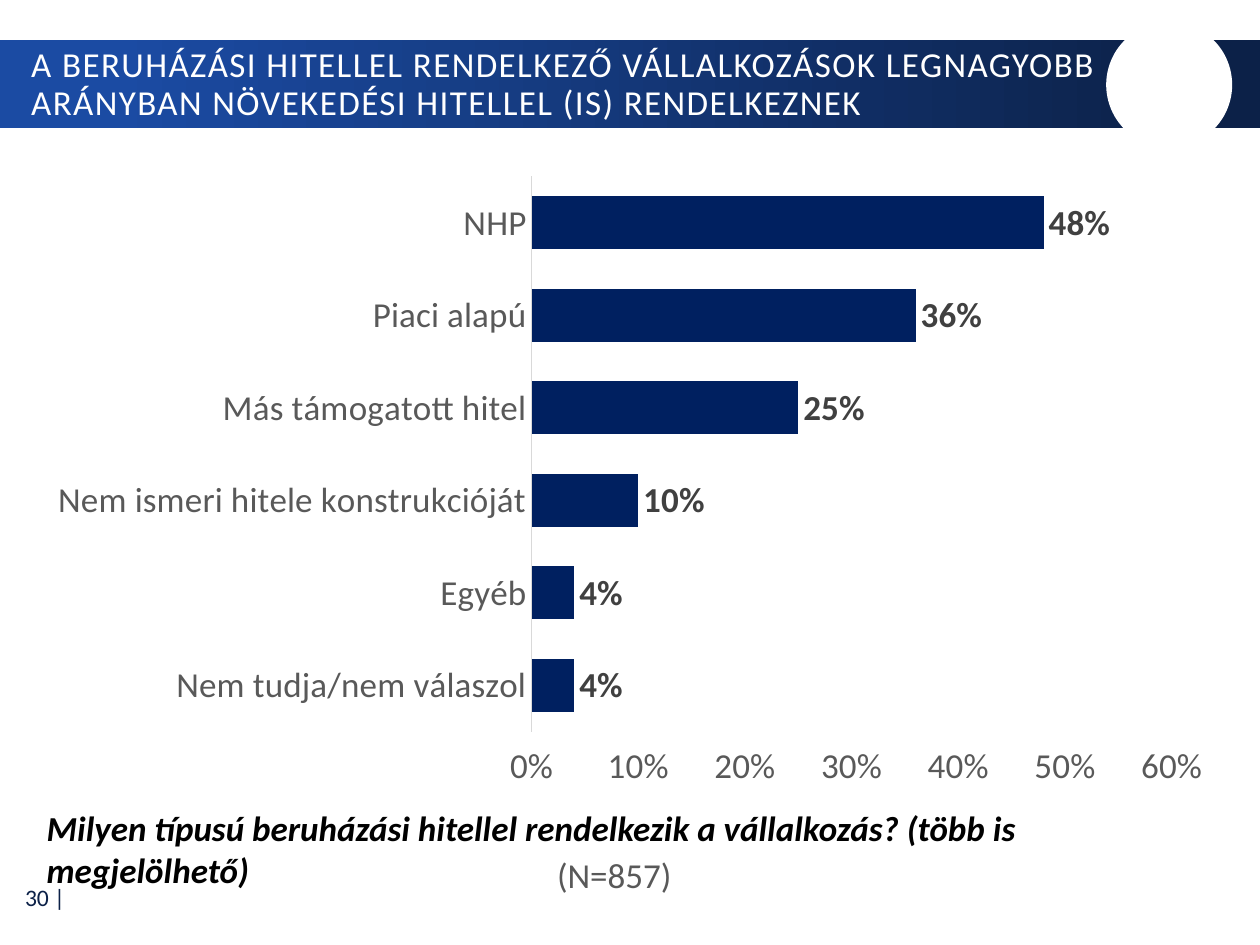
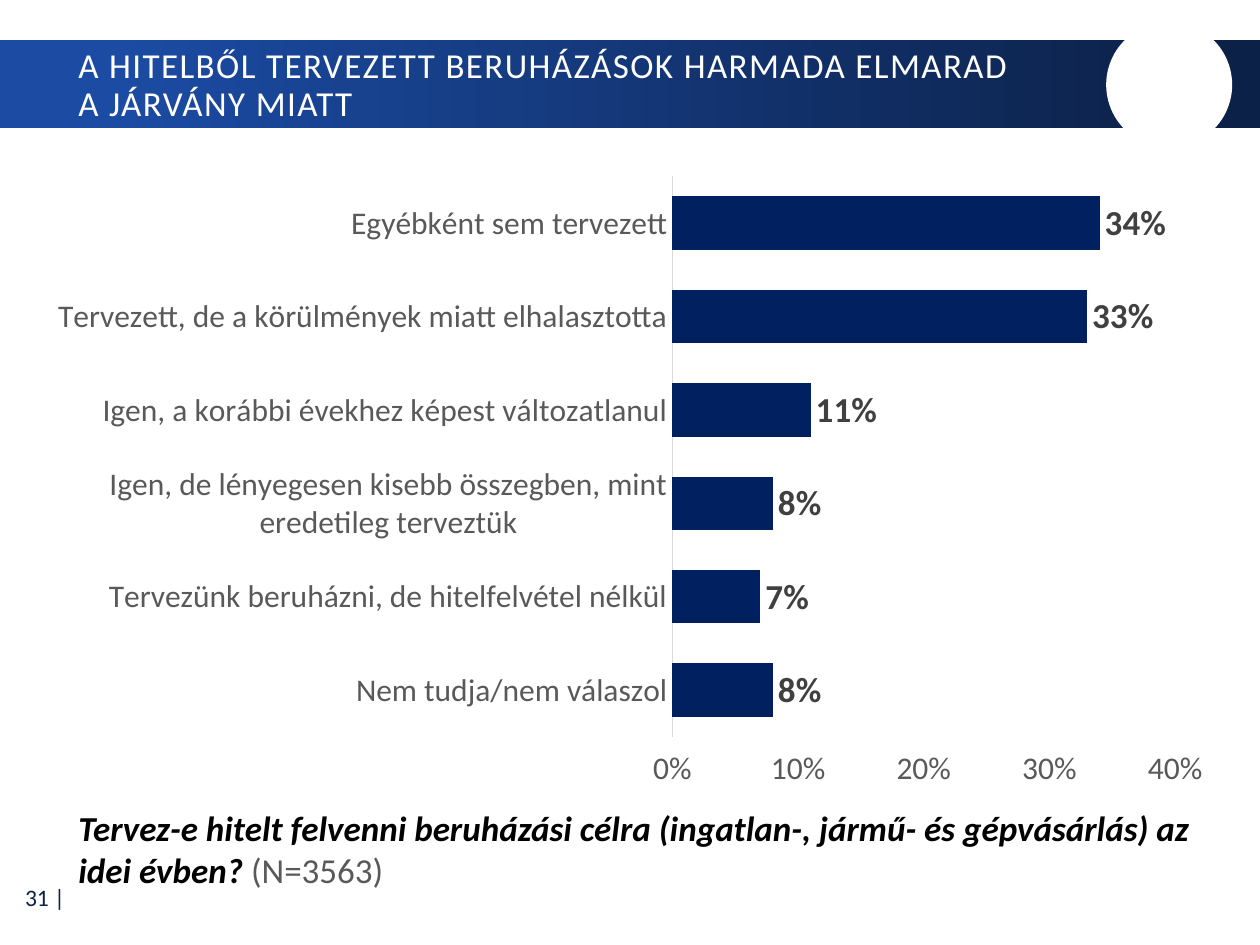
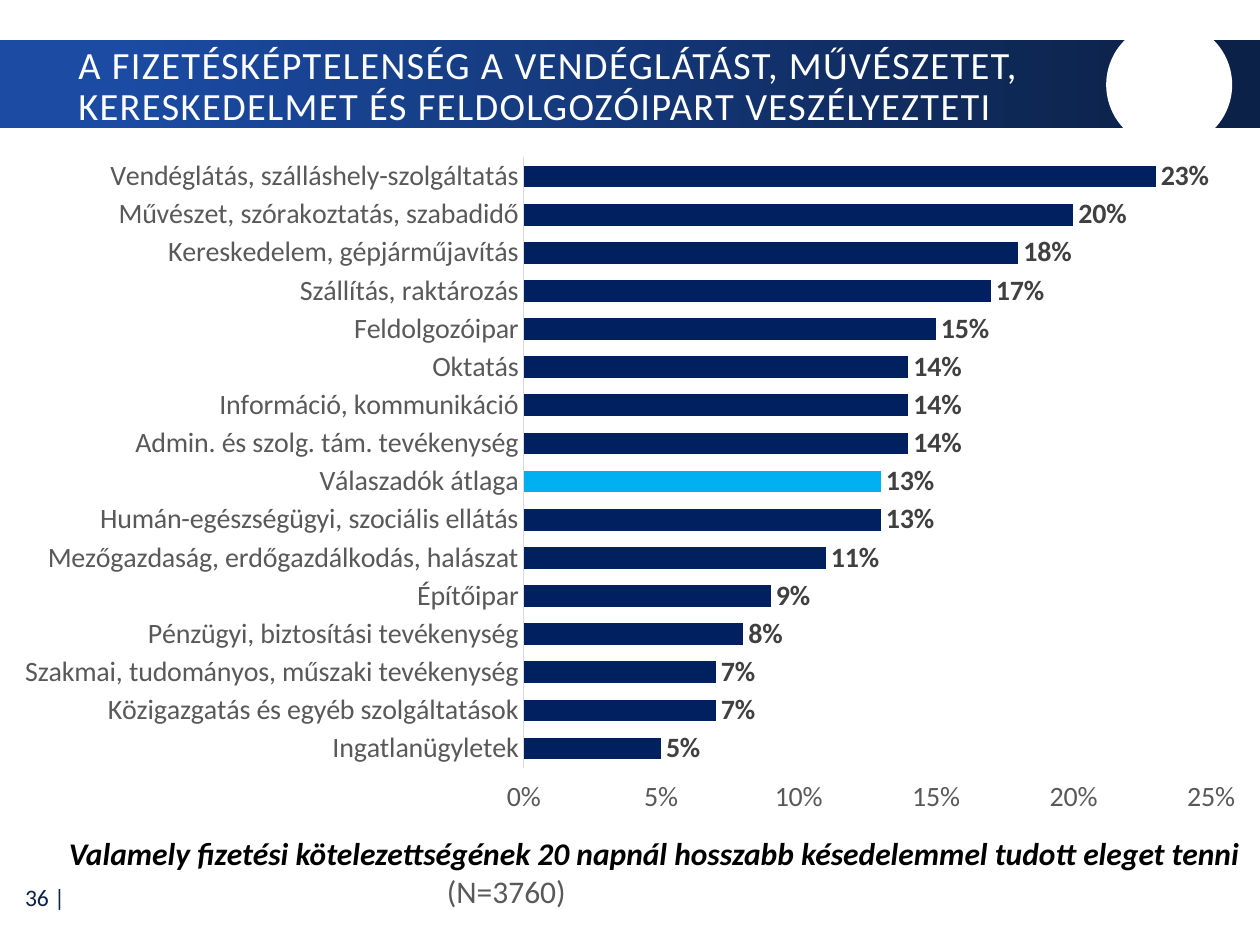
"""Builds three survey slides on corporate loans and late payments."""
from pptx import Presentation
from pptx import util as u
from pptx.chart import data as chart_data
from pptx.dml.color import RGBColor
from pptx.enum import chart as charts, shapes, text

FONT = "Calibri"
COLORS = {
    "band_start": "1B4BA3",
    "band_end": "0C2148",
    "white": "FFFFFF",
    "black": "000000",
    "bar": "002060",
    "highlight": "00B0F0",
    "axis_text": "595959",
    "axis_line": "D9D9D9",
    "value_text": "404040",
}
CHART_BOX = (0.69, 3.3, 24.03, 12.83)

LOAN_TYPES = {
    "NHP": 0.48,
    "Piaci alapú": 0.36,
    "Más támogatott hitel": 0.25,
    "Nem ismeri hitele konstrukcióját": 0.1,
    "Egyéb": 0.04,
    "Nem tudja/nem válaszol": 0.04,
}
LOAN_PLANS = {
    "Egyébként sem tervezett": 0.34,
    "Tervezett, de a körülmények miatt elhalasztotta": 0.33,
    "Igen, a korábbi évekhez képest változatlanul": 0.11,
    "Igen, de lényegesen kisebb összegben, mint eredetileg terveztük": 0.08,
    "Tervezünk beruházni, de hitelfelvétel nélkül": 0.07,
    "Nem tudja/nem válaszol": 0.08,
}
LATE_PAYERS = {
    "Vendéglátás, szálláshely-szolgáltatás": 0.23,
    "Művészet, szórakoztatás, szabadidő": 0.2,
    "Kereskedelem, gépjárműjavítás": 0.18,
    "Szállítás, raktározás": 0.17,
    "Feldolgozóipar": 0.15,
    "Oktatás": 0.14,
    "Információ, kommunikáció": 0.14,
    "Admin. és szolg. tám. tevékenység": 0.14,
    "Válaszadók átlaga": 0.13,
    "Humán-egészségügyi, szociális ellátás": 0.13,
    "Mezőgazdaság, erdőgazdálkodás, halászat": 0.11,
    "Építőipar": 0.09,
    "Pénzügyi, biztosítási tevékenység": 0.08,
    "Szakmai, tudományos, műszaki tevékenység": 0.07,
    "Közigazgatás és egyéb szolgáltatások": 0.07,
    "Ingatlanügyletek": 0.05,
}


def color(name):
    """Return a palette colour."""
    return RGBColor.from_string(COLORS[name])


def place(box):
    """Turn left, top, width and height in centimetres into lengths."""
    return [u.Cm(length) for length in box]


def style_font(font, size, shade, bold=False, italic=False):
    """Apply the shared typeface with a size, colour and emphasis."""
    font.name, font.size = FONT, u.Pt(size)
    font.bold, font.italic = bold, italic
    font.color.rgb = color(shade)


def add_frame(slide, box, anchor=text.MSO_ANCHOR.TOP):
    """Add a wrapping text box and return its text frame."""
    frame = slide.shapes.add_textbox(*place(box)).text_frame
    frame.word_wrap = True
    frame.vertical_anchor = anchor
    return frame


def add_run(paragraph, words, size, shade, **emphasis):
    """Append a styled run to a paragraph."""
    run = paragraph.add_run()
    run.text = words
    style_font(run.font, size, shade, **emphasis)
    return run


def add_plain_shape(slide, kind, box):
    """Add a preset shape without shadow or outline."""
    shape = slide.shapes.add_shape(kind, *place(box))
    shape.shadow.inherit = False
    shape.line.fill.background()
    return shape


def add_base(prs, number):
    """Add a slide with its page number, title band and round badge."""
    slide = prs.slides.add_slide(prs.slide_layouts[6])
    page = add_frame(slide, (0.04, 17.61, 1.52, 0.94), text.MSO_ANCHOR.MIDDLE).paragraphs[0]
    page.alignment = text.PP_ALIGN.RIGHT
    add_run(page, f"{number} |", 13.5, "band_end")

    band = add_plain_shape(slide, shapes.MSO_SHAPE.RECTANGLE, (0, 0.81, 25.4, 1.78))
    band.fill.gradient()
    band.fill.gradient_angle = 0
    ends = ((0.09, "band_start"), (0.95, "band_end"))
    for stop, (position, shade) in zip(band.fill.gradient_stops, ends):
        stop.position = position
        stop.color.rgb = color(shade)

    badge = add_plain_shape(slide, shapes.MSO_SHAPE.OVAL, (22.3, 0.44, 2.54, 2.54))
    badge.fill.solid()
    badge.fill.fore_color.rgb = color("white")
    return slide


def add_title(slide, box, lines, size=20):
    """Write the letter-spaced title over the band."""
    title = add_frame(slide, box, text.MSO_ANCHOR.MIDDLE).paragraphs[0]
    title.line_spacing = 0.9
    for index, line in enumerate(lines):
        if index:
            title.add_line_break()
        run = add_run(title, line, size, "white")
        run.font._element.set("spc", "80")


def style_axis(axis, size):
    """Give an axis its font and remove ticks and gridlines."""
    axis.has_major_gridlines = False
    axis.major_tick_mark = axis.minor_tick_mark = charts.XL_TICK_MARK.NONE
    style_font(axis.tick_labels.font, size, "axis_text")


def add_bars(slide, shares, maximum, step, axis_size, value_size, box=CHART_BOX, highlight=None):
    """Add a horizontal bar chart of percentage shares."""
    answers = chart_data.CategoryChartData(number_format="0%")
    answers.categories = list(shares)
    answers.add_series("Series 1", list(shares.values()))
    chart = slide.shapes.add_chart(
        charts.XL_CHART_TYPE.BAR_CLUSTERED, *place(box), answers).chart
    chart.has_legend = chart.has_title = False
    style_font(chart.font, 10, "black")

    categories, percents = chart.category_axis, chart.value_axis
    for axis in (categories, percents):
        style_axis(axis, axis_size)
    categories.reverse_order = True
    categories.format.line.color.rgb = color("axis_line")
    categories.format.line.width = u.Pt(0.75)
    percents.tick_label_position = charts.XL_TICK_LABEL_POSITION.HIGH
    percents.format.line.fill.background()
    percents.minimum_scale, percents.maximum_scale = 0, maximum
    percents.major_unit = step
    percents.tick_labels.number_format = "0%"
    percents.tick_labels.number_format_is_linked = False

    plot = chart.plots[0]
    plot.gap_width = 75
    plot.vary_by_categories = False
    bars = plot.series[0]
    bars.invert_if_negative = False
    bars.format.fill.solid()
    bars.format.fill.fore_color.rgb = color("bar")
    if highlight:
        fill = bars.points[list(shares).index(highlight)].format.fill
        fill.solid()
        fill.fore_color.rgb = color("highlight")

    labels = bars.data_labels
    labels.show_value = True
    labels.position = charts.XL_LABEL_POSITION.OUTSIDE_END
    labels.number_format = "0%"
    labels.number_format_is_linked = False
    style_font(labels.font, value_size, "value_text", bold=True)


def add_question(slide, box, question, size=20):
    """Write the survey question and return its text frame."""
    frame = add_frame(slide, box)
    add_run(frame.paragraphs[0], question, size, "black", bold=True, italic=True)
    return frame


def add_sample(paragraph, count, size=20):
    """Write the sample size."""
    add_run(paragraph, f"(N={count})", size, "axis_text")


def main():
    """Build and save the presentation."""
    prs = Presentation()
    prs.slide_width, prs.slide_height = u.Cm(25.4), u.Cm(19.05)

    types = add_base(prs, 30)
    add_title(types, (0.38, 0.86, 22.15, 1.7), [
        "A BERUHÁZÁSI HITELLEL RENDELKEZŐ VÁLLALKOZÁSOK LEGNAGYOBB "
        "ARÁNYBAN NÖVEKEDÉSI HITELLEL (IS) RENDELKEZNEK"])
    add_bars(types, LOAN_TYPES, 0.6, 0.1, 20, 20)
    add_question(types, (0.69, 16.13, 24.26, 1.12),
                 "Milyen típusú beruházási hitellel rendelkezik a vállalkozás? "
                 "(több is megjelölhető)")
    add_sample(add_frame(types, (10.98, 17.08, 3.43, 1.12)).paragraphs[0], 857)

    plans = add_base(prs, 31)
    add_title(plans, (1.33, 0.89, 21.13, 1.7), [
        "A HITELBŐL TERVEZETT BERUHÁZÁSOK HARMADA ELMARAD ", "A JÁRVÁNY MIATT"])
    add_bars(plans, LOAN_PLANS, 0.4, 0.1, 18, 20)
    question = add_question(plans, (1.33, 16.13, 23.62, 1.96),
                            "Tervez-e hitelt felvenni beruházási célra "
                            "(ingatlan-, jármű- és gépvásárlás) az idei évben? ")
    add_sample(question.paragraphs[0], 3563)

    late = add_base(prs, 36)
    add_title(late, (1.33, 0.92, 21.13, 1.7), [
        "A FIZETÉSKÉPTELENSÉG A VENDÉGLÁTÁST, MŰVÉSZETET, "
        "KERESKEDELMET ÉS FELDOLGOZÓIPART VESZÉLYEZTETI"], size=22)
    add_bars(late, LATE_PAYERS, 0.25, 0.05, 16, 16,
             box=(0, 2.9, 25.4, 13.79), highlight="Válaszadók átlaga")
    question = add_question(late, (1.14, 16.69, 24.26, 1.8),
                            "Valamely fizetési kötelezettségének 20 napnál hosszabb "
                            "késedelemmel tudott eleget tenni", size=18)
    sample = question.add_paragraph()
    sample._p.get_or_add_pPr().set("marL", str(u.Cm(7.62)))
    add_sample(sample, 3760, size=18)

    prs.save("out.pptx")


if __name__ == "__main__":
    main()
